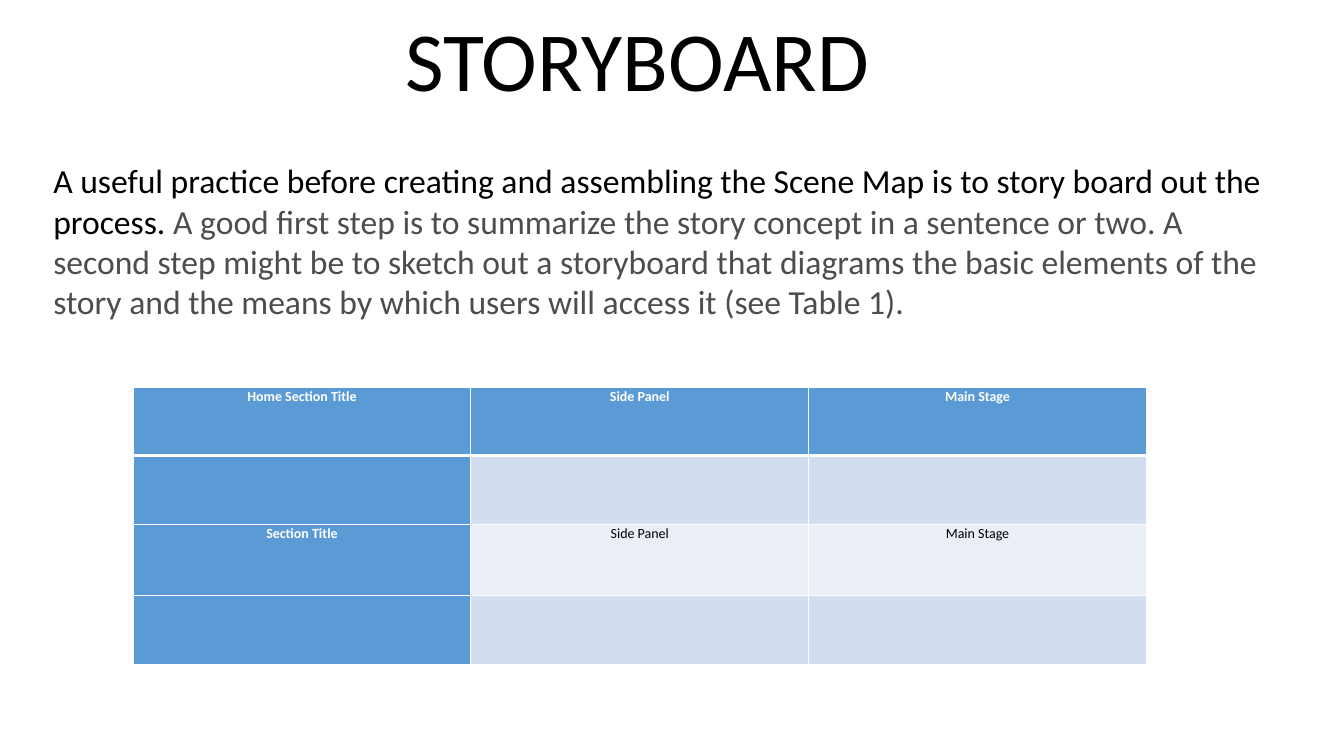
from lxml import etree
from pptx import Presentation
from pptx import util as u
from pptx.dml.color import RGBColor
from pptx.enum import text as t
from pptx.oxml import parse_xml
from pptx.oxml.ns import nsdecls

PX = 9144  # EMU per px, 100 px to the inch
FONT = "Calibri"
HUES = {"black": "000000", "grey": "4D4D4D", "white": "FFFFFF",
        "head": "5B9BD5", "dark": "D2DEEF", "light": "EAEFF7"}
ROWS = [
    ("Home Section Title", "Side Panel", "Main Stage"),
    ("", "", ""),
    ("Section Title", "Side Panel", "Main Stage"),
    ("", "", ""),
]
HIGH = (68, 68, 71, 68)
INTRO = ("A useful practice before creating and assembling the Scene Map "
         "is to story board out the process. ")
STEPS = ("A good first step is to summarize the story concept in a sentence "
         "or two. A second step might be to sketch out a storyboard that "
         "diagrams the basic elements of the story and the means by which "
         "users will access it (see Table 1).")


def px(n):
    return u.Emu(n * PX)


def style(run, size, hue, bold=False):
    font = run.font
    font.name, font.size, font.bold = FONT, u.Pt(size), bold
    font.color.rgb = RGBColor.from_string(HUES[hue])


def add_text(slide, box, parts, size, anchor, align, gap=1.0):
    """Add a text box of one paragraph; parts are (words, hue) pairs."""
    frame = slide.shapes.add_textbox(*map(px, box)).text_frame
    frame.word_wrap = True
    frame.vertical_anchor = anchor
    para = frame.paragraphs[0]
    para.alignment, para.line_spacing = align, gap
    for words, hue in parts:
        run = para.add_run()
        run.text = words
        style(run, size, hue)


def edge(cell, low):
    """Draw white cell borders, the bottom one low points wide."""
    props = cell._tc.get_or_add_tcPr()
    for i, (side, wide) in enumerate(zip("LRTB", (1, 1, 1, low))):
        line = parse_xml(f'<a:ln{side} {nsdecls("a")} w="{u.Pt(wide)}"/>')
        fill = etree.SubElement(line, line.tag.replace(f"ln{side}", "solidFill"))
        tint = etree.SubElement(fill, line.tag.replace(f"ln{side}", "srgbClr"))
        tint.set("val", HUES["white"])
        props.insert(i, line)


def fill_cell(cell, words, hue, bold):
    cell.fill.solid()
    cell.fill.fore_color.rgb = RGBColor.from_string(HUES[hue])
    if not words:
        return
    cell.margin_left = cell.margin_right = px(7)
    cell.margin_top = cell.margin_bottom = 0
    para = cell.text_frame.paragraphs[0]
    para.text = words
    para.alignment, para.line_spacing = t.PP_ALIGN.CENTER, 1.07
    style(para.runs[0], 10, "white" if bold else "black", bold)


def add_grid(slide, left, top, wide):
    size = (len(ROWS), len(ROWS[0]))
    spot = map(px, (left, top, wide * size[1], sum(HIGH)))
    grid = slide.shapes.add_table(*size, *spot).table
    grid.first_col = True
    for col in grid.columns:
        col.width = px(wide)
    for r, row in enumerate(ROWS):
        grid.rows[r].height = px(HIGH[r])
        for c, words in enumerate(row):
            bold = r == 0 or c == 0
            hue = "head" if bold else "dark" if r % 2 else "light"
            fill_cell(grid.cell(r, c), words, hue, bold)
            edge(grid.cell(r, c), 1 if r else 3)


def main():
    deck = Presentation()
    deck.slide_width, deck.slide_height = u.Inches(13.33), u.Inches(7.5)
    slide = deck.slides.add_slide(deck.slide_layouts[6])
    # Storyboard table
    add_grid(slide, 132, 384, 335)
    # Body text
    add_text(slide, (43, 154, 1239, 212), [(INTRO, "black"), (STEPS, "grey")],
             24, t.MSO_ANCHOR.TOP, t.PP_ALIGN.LEFT)
    # Title
    add_text(slide, (132, 14, 1000, 100), [("STORYBOARD", "black")],
             60, t.MSO_ANCHOR.BOTTOM, t.PP_ALIGN.CENTER, 0.9)
    deck.save("out.pptx")


if __name__ == "__main__":
    main()
